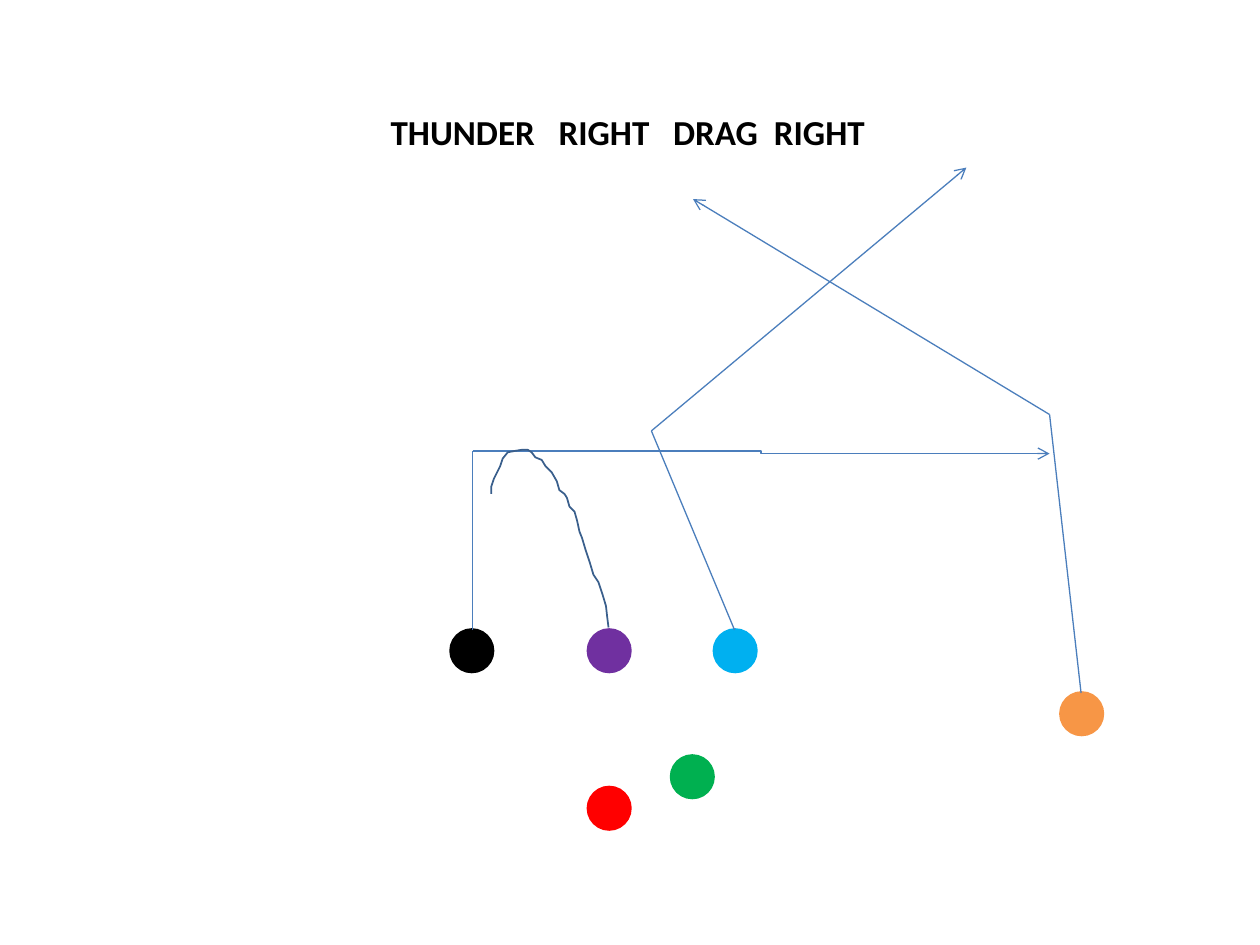
"""Draw a football play with players, routes and a title."""
from pptx import Presentation
from pptx.dml.color import RGBColor
from pptx.enum.shapes import MSO_CONNECTOR as LINK, MSO_SHAPE as SHAPE
from pptx.enum.text import MSO_ANCHOR as ANCHOR, PP_ALIGN as ALIGN
from pptx.oxml.ns import qn
from pptx.util import Inches, Pt
from lxml.etree import SubElement

BLACK = RGBColor(0x00, 0x00, 0x00)
PURPLE = RGBColor(0x70, 0x30, 0xA0)
GREEN = RGBColor(0x00, 0xB0, 0x50)
ORANGE = RGBColor(0xF7, 0x96, 0x46)
SKY = RGBColor(0x00, 0xB0, 0xF0)
RED = RGBColor(0xFF, 0x00, 0x00)
BLUE = RGBColor(0x4B, 0x7E, 0xBC)
NAVY = RGBColor(0x3A, 0x5F, 0x8C)

TITLE = "THUNDER   RIGHT   DRAG  RIGHT"
SIZE = 0.33
PLAYERS = [
    (4.67, 5, PURPLE), (5.33, 6, GREEN), (8.42, 5.5, ORANGE),
    (3.58, 5, BLACK), (5.67, 5, SKY), (4.67, 6.25, RED),
]
ROUTES = [
    [(8.58, 5.5), (8.33, 3.29), (5.5, 1.58)],
    [(5.83, 5), (5.17, 3.42), (7.67, 1.33)],
    [(3.75, 5), (3.75, 3.58), (8.33, 3.6)],
]
HOOK = [
    (4.83, 4.98), (4.82, 4.9), (4.81, 4.81), (4.78, 4.71), (4.75, 4.62),
    (4.71, 4.56), (4.68, 4.46), (4.65, 4.37), (4.62, 4.27), (4.6, 4.22),
    (4.58, 4.13), (4.56, 4.06), (4.52, 4.02), (4.5, 3.95), (4.48, 3.92),
    (4.44, 3.89), (4.42, 3.82), (4.38, 3.75), (4.33, 3.7), (4.3, 3.65),
    (4.25, 3.63), (4.22, 3.59), (4.19, 3.57), (4.14, 3.57), (4.08, 3.58),
    (4.03, 3.59), (3.99, 3.64), (3.97, 3.7), (3.92, 3.8), (3.9, 3.86),
    (3.9, 3.92),
]


def write(shape, text, size=20, color=BLACK, bold=True, align=ALIGN.LEFT):
    frame = shape.text_frame
    frame.word_wrap = False
    frame.vertical_anchor = ANCHOR.TOP
    para = frame.paragraphs[0]
    para.alignment = align
    run = para.add_run()
    run.text = text
    font = run.font
    font.name, font.size, font.bold = "Calibri", Pt(size), bold
    font.color.rgb = color


def player(slide, left, top, color):
    dot = slide.shapes.add_shape(SHAPE.OVAL, *map(Inches, (left, top, SIZE, SIZE)))
    dot.shadow.inherit = False
    dot.fill.solid()
    dot.fill.fore_color.rgb = color
    dot.line.color.rgb = color
    dot.line.width = Pt(2)


def leg(slide, start, end, kind=LINK.STRAIGHT, arrow=False):
    link = slide.shapes.add_connector(kind, *map(Inches, start + end))
    link.line.color.rgb = BLUE
    link.line.width = Pt(0.75)
    props = link._element.spPr
    if arrow:
        SubElement(props.find(qn("a:ln")), qn("a:tailEnd"), type="arrow")
    SubElement(props, qn("a:effectLst"))


def route(slide, start, turn, end):
    leg(slide, start, turn)
    kind = LINK.ELBOW if start[0] == turn[0] else LINK.STRAIGHT
    leg(slide, turn, end, kind, arrow=True)


def hook(slide, points):
    spots = [(Inches(x), Inches(y)) for x, y in points]
    pen = slide.shapes.build_freeform(*spots[0], scale=1.0)
    pen.add_line_segments(spots[1:], close=False)
    curve = pen.convert_to_shape()
    curve.shadow.inherit = False
    curve.fill.background()
    curve.line.color.rgb = NAVY
    curve.line.width = Pt(1)


def main():
    deck = Presentation()
    deck.slide_width, deck.slide_height = Inches(10), Inches(7.5)
    slide = deck.slides.add_slide(deck.slide_layouts[5])
    title = slide.shapes.title
    title.left, title.top = Inches(3), Inches(0.83)
    title.width, title.height = Inches(4), Inches(0.44)
    write(title, TITLE)
    for spot in PLAYERS:
        player(slide, *spot)
    for stops in ROUTES:
        route(slide, *stops)
    hook(slide, HOOK)
    deck.save("out.pptx")


if __name__ == "__main__":
    main()
